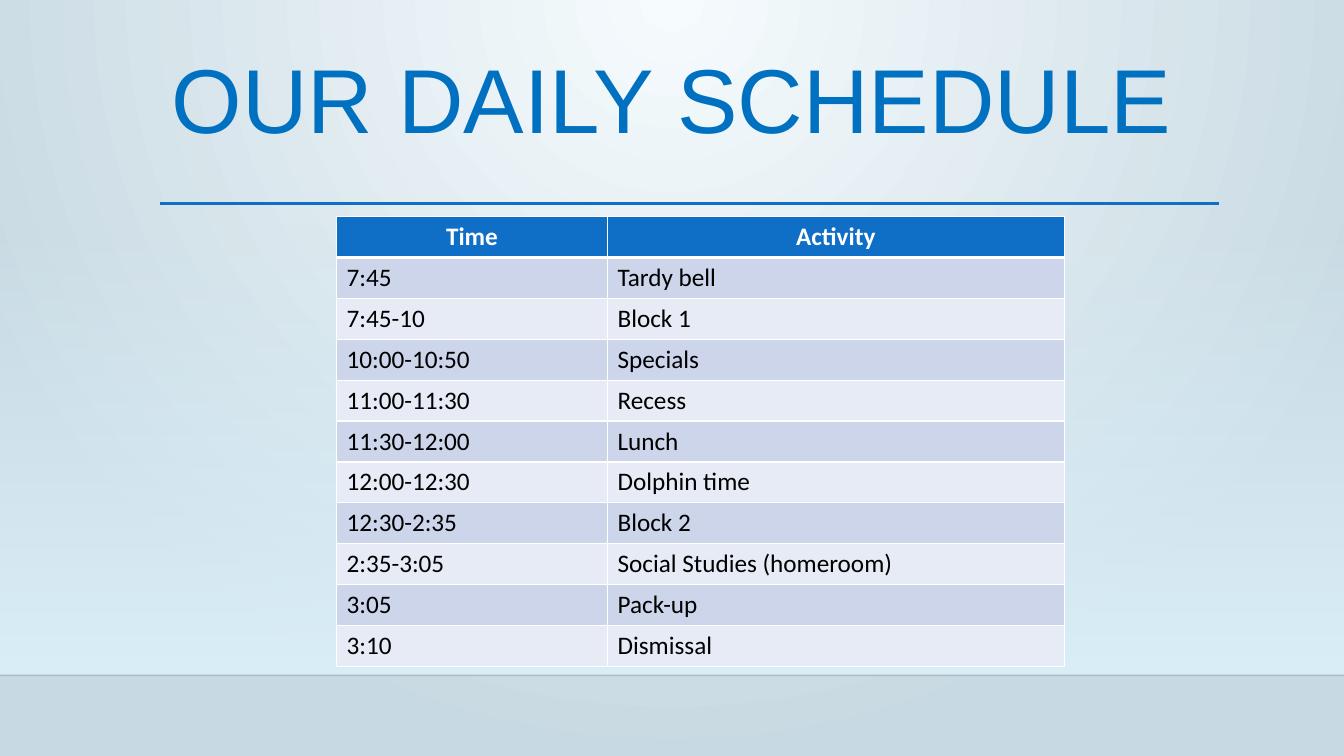
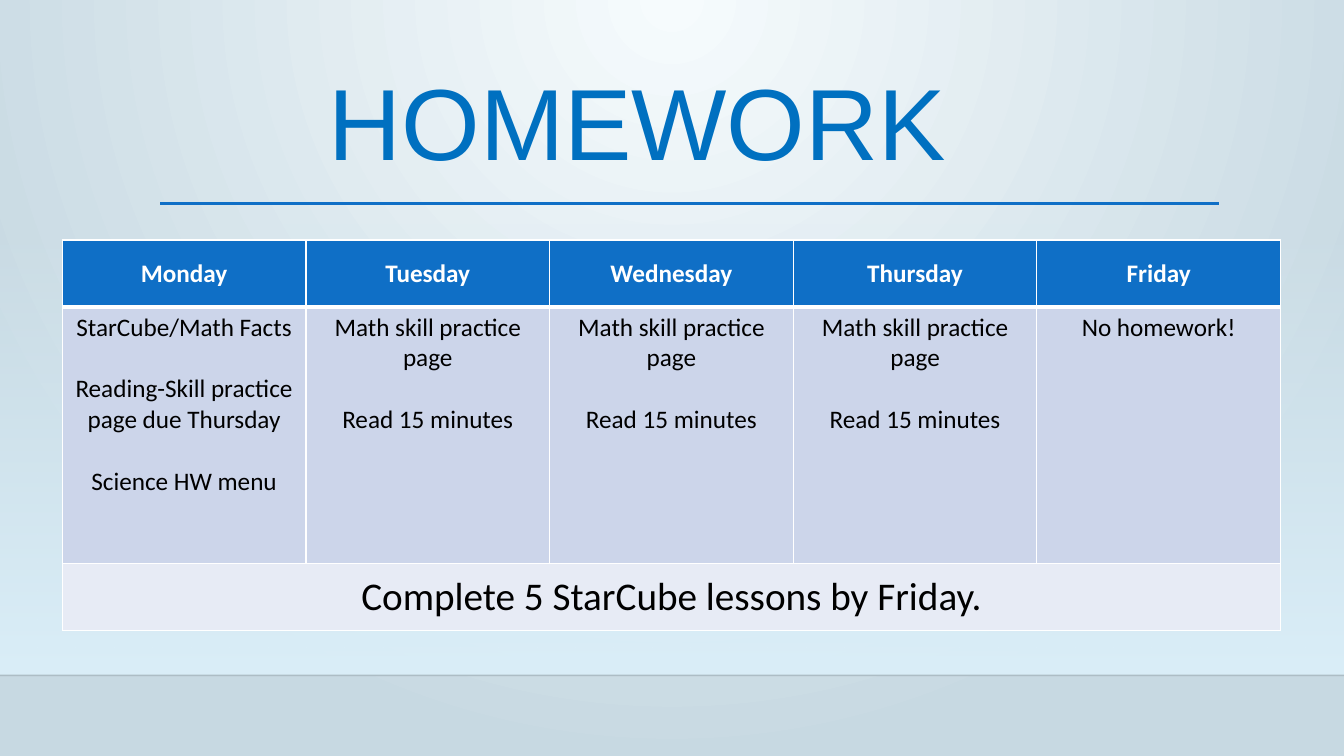
from dataclasses import dataclass

from lxml import etree
from pptx import Presentation
from pptx.dml.color import RGBColor
from pptx.enum.shapes import MSO_CONNECTOR, MSO_SHAPE
from pptx.enum.text import MSO_ANCHOR, PP_ALIGN
from pptx.oxml import parse_xml
from pptx.oxml.ns import nsdecls, qn
from pptx.util import Cm, Pt

LEFT, CENTER = PP_ALIGN.LEFT, PP_ALIGN.CENTER
TOP, MIDDLE, BOTTOM = MSO_ANCHOR.TOP, MSO_ANCHOR.MIDDLE, MSO_ANCHOR.BOTTOM
RECTANGLE = MSO_SHAPE.RECTANGLE
STRAIGHT = MSO_CONNECTOR.STRAIGHT


@dataclass(frozen=True)
class Theme:
    title_font: str = "Arial"
    body_font: str = "Calibri"
    title: str = "0070C0"
    accent: str = "0F6FC6"
    glow: str = "F6FBFD"
    edge: str = "C7D9E2"
    haze: str = "DBEFF9"
    ground: str = "000001"
    white: str = "FFFFFF"
    black: str = "000000"
    bands: tuple = ("CCD5EA", "E7EBF5")
    body_size: float = 18
    note_size: float = 28
    paragraph_gap: float = 22
    border: float = 1
    header_border: float = 3


THEME = Theme()
SLIDE_W, SLIDE_H = Cm(33.87), Cm(19.05)
HAZE_TOP, GROUND_Y = Cm(5.61), Cm(17.02)
RULE_LEFT, RULE_RIGHT, RULE_Y = Cm(4.04), Cm(30.71), Cm(5.13)

SCHEDULE = [
    ("Time", "Activity"),
    ("7:45", "Tardy bell"),
    ("7:45-10", "Block 1"),
    ("10:00-10:50", "Specials"),
    ("11:00-11:30", "Recess"),
    ("11:30-12:00", "Lunch"),
    ("12:00-12:30", "Dolphin time"),
    ("12:30-2:35", "Block 2"),
    ("2:35-3:05", "Social Studies (homeroom)"),
    ("3:05", "Pack-up"),
    ("3:10", "Dismissal"),
]

MIDWEEK = "Math skill practice page\nRead 15 minutes"
HOMEWORK = [
    ("Monday", "Tuesday", "Wednesday", "Thursday", "Friday"),
    (
        "StarCube/Math Facts\n"
        "Reading-Skill practice page due Thursday\n"
        "Science HW menu",
        MIDWEEK, MIDWEEK, MIDWEEK,
        "No homework!",
    ),
    ("Complete 5 StarCube lessons by Friday.",),
]

SLIDES = [
    {
        "title": {
            "text": "OUR DAILY SCHEDULE", "size": 64.8, "align": CENTER,
            "anchor": TOP, "spacing": 0.9,
            "box": (Cm(2.49), Cm(1.27), Cm(28.88), Cm(3.2)),
        },
        "table": {
            "rows": SCHEDULE, "left": Cm(8.48), "top": Cm(5.46),
            "widths": [Cm(6.83), Cm(11.51)],
            "heights": [Cm(1.03)] * len(SCHEDULE),
            "align": LEFT, "header_anchor": TOP,
        },
    },
    {
        "title": {
            "text": "HOMEWORK", "size": 72.2, "align": LEFT,
            "anchor": BOTTOM, "spacing": 1.1,
            "box": (Cm(8.03), Cm(1.07), Cm(21.06), Cm(3.61)),
        },
        "table": {
            "rows": HOMEWORK, "left": Cm(1.57), "top": Cm(6.05),
            "widths": [Cm(6.14)] * 5,
            "heights": [Cm(1.69), Cm(6.45), Cm(1.69)],
            "align": CENTER, "header_anchor": MIDDLE,
        },
    },
]


def rgb(value):
    return RGBColor.from_string(value)


def gradient(start, end, direction, start_alpha=100):
    return parse_xml(
        f'<a:gradFill {nsdecls("a")} rotWithShape="1"><a:gsLst>'
        f'<a:gs pos="0"><a:srgbClr val="{start}">'
        f'<a:alpha val="{start_alpha * 1000}"/></a:srgbClr></a:gs>'
        f'<a:gs pos="100000"><a:srgbClr val="{end}"/></a:gs>'
        f"</a:gsLst>{direction}</a:gradFill>"
    )


def set_background(master):
    master.background.fill.solid()
    bg = master.element.find(".//" + qn("p:bgPr"))
    direction = ('<a:path path="circle"><a:fillToRect l="43000" t="0" '
                 'r="43000" b="100000"/></a:path>')
    bg.replace(bg[0], gradient(THEME.glow, THEME.edge, direction))


def add_line(slide, x1, x2, y, color, width, alpha=100):
    line = slide.shapes.add_connector(STRAIGHT, x1, y, x2, y)
    line.line.color.rgb = rgb(color)
    line.line.width = Pt(width)
    props = line._element.spPr
    etree.SubElement(props, qn("a:effectLst"))
    if alpha < 100:
        clr = props.find(".//" + qn("a:srgbClr"))
        etree.SubElement(clr, qn("a:alpha")).set("val", str(alpha * 1000))


def add_backdrop(slide):
    haze = slide.shapes.add_shape(
        RECTANGLE, 0, HAZE_TOP, SLIDE_W, GROUND_Y - HAZE_TOP)
    haze.shadow.inherit = False
    haze.line.fill.background()
    haze.fill.solid()
    props = haze._element.spPr
    props.replace(
        props.find(qn("a:solidFill")),
        gradient(THEME.haze, THEME.haze, '<a:lin ang="5400000" scaled="0"/>', 0))
    add_line(slide, 0, SLIDE_W, GROUND_Y, THEME.ground, 1, alpha=20)
    add_line(slide, RULE_LEFT, RULE_RIGHT, RULE_Y, THEME.accent, 2.5)


def add_run(p, text, font, size, color, bold=False):
    r = p.add_run()
    r.text = text
    r.font.name = font
    r.font.size = Pt(size)
    r.font.color.rgb = rgb(color)
    r.font.bold = bold


def add_title(slide, text, size, align, anchor, spacing, box):
    tf = slide.shapes.add_textbox(*box).text_frame
    tf.word_wrap = True
    tf.vertical_anchor = anchor
    p = tf.paragraphs[0]
    p.alignment = align
    p.line_spacing = spacing
    add_run(p, text, THEME.title_font, size, THEME.title)


def set_borders(cell, top, bottom):
    props = cell._tc.get_or_add_tcPr()
    widths = {"L": THEME.border, "R": THEME.border, "T": top, "B": bottom}
    for side, width in widths.items():
        props.append(parse_xml(
            f'<a:ln{side} {nsdecls("a")} w="{Pt(width)}"><a:solidFill>'
            f'<a:srgbClr val="{THEME.white}"/></a:solidFill></a:ln{side}>'))


def style_cell(cell, row):
    set_borders(
        cell,
        top=THEME.header_border if row == 1 else THEME.border,
        bottom=THEME.header_border if row == 0 else THEME.border)
    cell.fill.solid()
    color = THEME.accent if row == 0 else THEME.bands[(row - 1) % 2]
    cell.fill.fore_color.rgb = rgb(color)


def write_cell(cell, text, align, size, color, bold):
    tf = cell.text_frame
    for i, line in enumerate(text.split("\n")):
        p = tf.add_paragraph() if i else tf.paragraphs[0]
        p.alignment = align
        if i:
            p.space_before = Pt(THEME.paragraph_gap)
        add_run(p, line, THEME.body_font, size, color, bold)


def add_table(slide, rows, left, top, widths, heights, align, header_anchor):
    """Draw a banded table; a row with a single entry spans every column."""
    table = slide.shapes.add_table(
        len(rows), len(widths), left, top, sum(widths), sum(heights)).table
    for column, width in zip(table.columns, widths):
        column.width = width
    for r, (texts, height) in enumerate(zip(rows, heights)):
        table.rows[r].height = height
        header, spans = r == 0, len(texts) == 1
        for c in range(len(widths)):
            style_cell(table.cell(r, c), r)
        if spans:
            table.cell(r, 0).merge(table.cell(r, len(widths) - 1))
        for c, text in enumerate(texts):
            cell = table.cell(r, c)
            cell.vertical_anchor = (
                header_anchor if header else MIDDLE if spans else TOP)
            write_cell(
                cell, text, CENTER if header else align,
                THEME.note_size if spans else THEME.body_size,
                THEME.white if header else THEME.black, header)


def main():
    prs = Presentation()
    prs.slide_width, prs.slide_height = SLIDE_W, SLIDE_H
    set_background(prs.slide_master)
    for content in SLIDES:
        slide = prs.slides.add_slide(prs.slide_layouts[6])
        add_backdrop(slide)
        add_title(slide, **content["title"])
        add_table(slide, **content["table"])
    prs.save("out.pptx")


if __name__ == "__main__":
    main()
